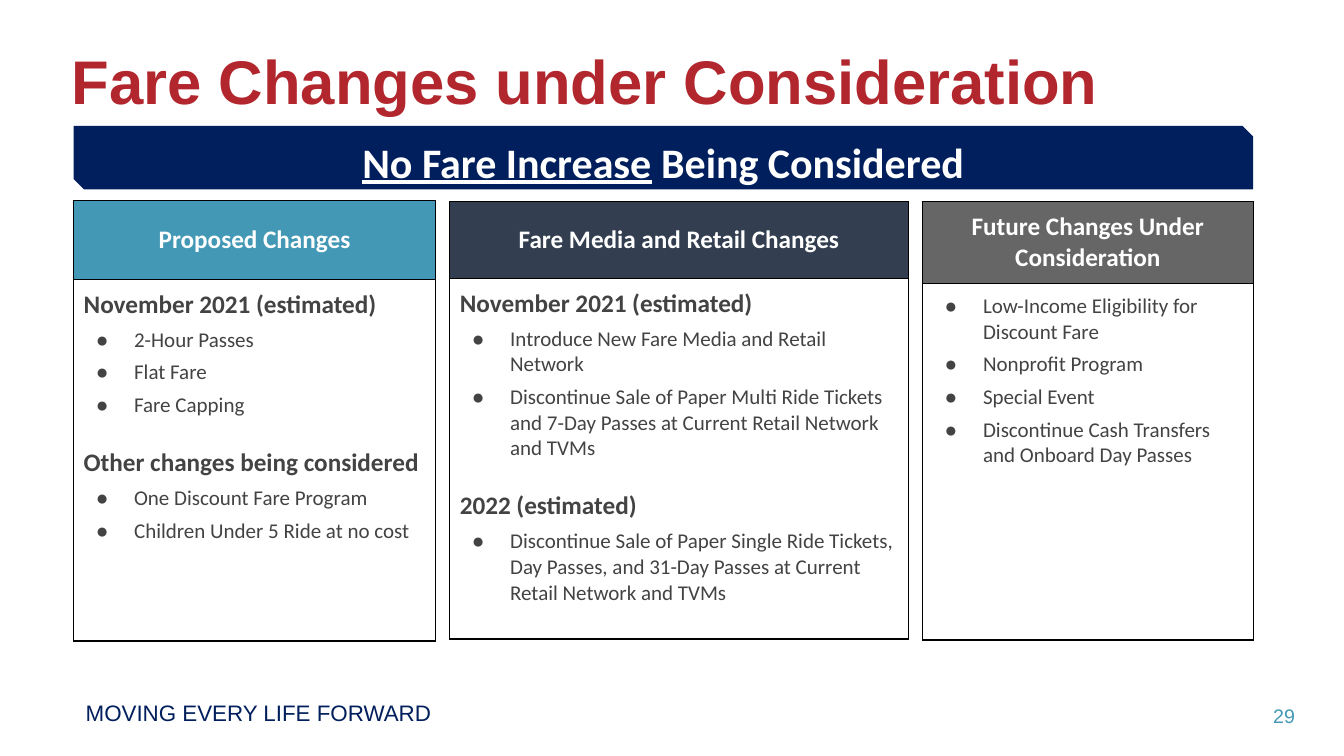
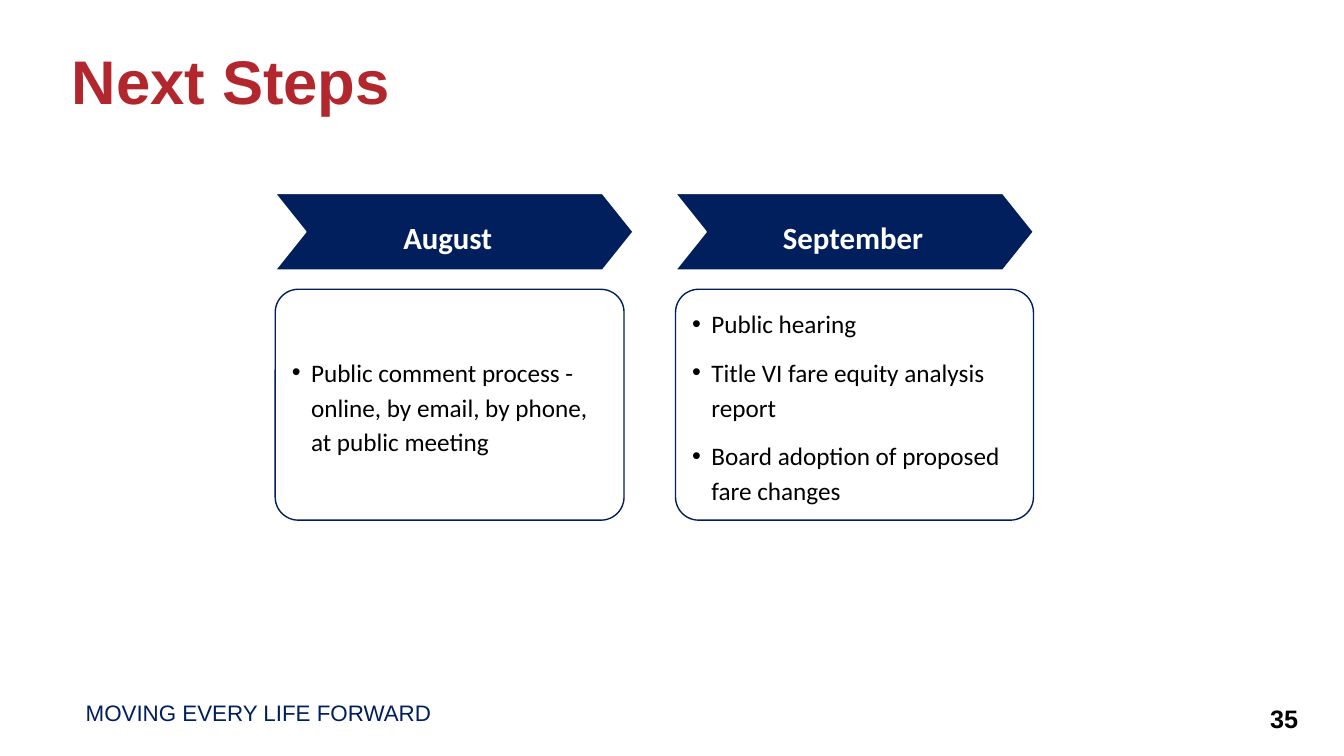
from lxml.etree import SubElement as Sub
from pptx import Presentation
from pptx.dml.color import RGBColor as RGB
from pptx.enum.shapes import MSO_SHAPE as Geo
from pptx.enum.text import MSO_ANCHOR as Anchor, MSO_AUTO_SIZE as Auto, PP_ALIGN as Align
from pptx.oxml.ns import qn
from pptx.util import Inches, Pt

HUES = {"navy": "011F5C", "red": "B2272D", "teal": "4298B5", "slate": "333F50",
        "gray": "666666", "text": "434343", "black": "000000", "white": "FFFFFF"}
INK = {name: RGB.from_string(code) for name, code in HUES.items()}

deck = Presentation()
deck.slide_width, deck.slide_height = Inches(13.33), Inches(7.5)


def put(frame, lines, size, hue, face="Calibri", bold=False, align=Align.LEFT,
        pad=(0.1, 0.1), gap=0, spread=None, dot=None, hang=(0, 0)):
    """Write one style of paragraphs after any text already in the frame."""
    if pad:
        frame.margin_left = frame.margin_right = Inches(pad[0])
        frame.margin_top = frame.margin_bottom = Inches(pad[1])
        frame.word_wrap = True
    for line in lines:
        fresh = not frame.text
        para = frame.paragraphs[0] if fresh else frame.add_paragraph()
        para.text = line
        if dot:
            props = para._p.get_or_add_pPr()
            props.set("marL", str(Inches(hang[0])))
            props.set("indent", str(Inches(hang[1])))
            tint = Sub(props, qn("a:buClr"))
            Sub(tint, qn("a:srgbClr"), val=HUES[hue])
            Sub(props, qn("a:buFont"), typeface="Arial")
            Sub(props, qn("a:buChar"), char=dot)
        para.alignment = align
        para.space_before = Pt(0 if fresh else gap)
        if spread:
            para.line_spacing = spread
        for run in para.runs:
            font = run.font
            font.name, font.size, font.bold = face, Pt(size), bold
            font.color.rgb = INK[hue]


def start(title, page, size, hue, bold):
    """Add a slide with its title, footer and page number."""
    slide = deck.slides.add_slide(deck.slide_layouts[5])
    head = slide.shapes.title
    head.left, head.top, head.width, head.height = map(Inches, (0.61, 0.46, 11.5, 0.76))
    head.text_frame.auto_size = Auto.NONE
    head.text_frame.vertical_anchor = Anchor.BOTTOM
    put(head.text_frame, [title], 44, "red", "Arial", True, pad=(0.1, 0.05), spread=0.9)
    foot = slide.shapes.add_textbox(*map(Inches, (0.85, 6.94, 4.76, 0.27)))
    put(foot.text_frame, ["MOVING EVERY LIFE FORWARD"], 16, "navy", "Arial", pad=(0, 0))
    mark = slide.shapes.add_textbox(*map(Inches, (12.59, 6.98, 0.29, 0.28)))
    put(mark.text_frame, [page], size, hue, "Arial", bold, Align.CENTER, pad=(0, 0))
    return slide


# Fare changes: a banner over three columns
LEFT, GAP = 0.73, 0.14
fares = start("Fare Changes under Consideration", "29", 14, "teal", False)
band = fares.shapes.add_shape(Geo.SNIP_2_DIAG_RECTANGLE,
                              *map(Inches, (LEFT, 1.25, 11.7, 0.63)))
band.shadow.inherit = False
band.fill.solid()
band.fill.fore_color.rgb = INK["navy"]
band.line.fill.background()
band.text_frame.vertical_anchor = Anchor.MIDDLE
put(band.text_frame, ["No Fare Increase"], 30, "white", bold=True,
    align=Align.CENTER, pad=(0.1, 0), spread=1.15)
first = band.text_frame.paragraphs[0]
first.runs[0].font.underline = True
rest = first.add_run()
rest.text = " Being Considered"
rest.font.name, rest.font.size, rest.font.bold = "Calibri", Pt(30), True
rest.font.color.rgb = INK["white"]

columns = [
    ("Proposed Changes", "teal", 1.99, 3.59, (0.78, 3.59), [
        ("November 2021 (estimated)", ["2-Hour Passes", "Flat Fare", "Fare Capping"]),
        ("Other changes being considered",
         ["One Discount Fare Program", "Children Under 5 Ride at no cost"])]),
    ("Fare Media and Retail Changes", "slate", 2, 4.55, (0.76, 3.58), [
        ("November 2021 (estimated)",
         ["Introduce New Fare Media and Retail Network",
          "Discontinue Sale of Paper Multi Ride Tickets and 7-Day Passes "
          "at Current Retail Network and TVMs"]),
        ("2022 (estimated)",
         ["Discontinue Sale of Paper Single Ride Tickets, Day Passes, "
          "and 31-Day Passes at Current Retail Network and TVMs"])]),
    ("Future Changes Under Consideration", "gray", 2, 3.28, (0.81, 3.54), [
        (None, ["Low-Income Eligibility for Discount Fare", "Nonprofit Program",
                "Special Event", "Discontinue Cash Transfers and Onboard Day Passes"])]),
]
x = LEFT
for name, hue, top, wide, rows, groups in columns:
    grid = fares.shapes.add_table(2, 1, *map(Inches, (x, top, wide, sum(rows)))).table
    grid.first_row = grid.horz_banding = False
    for row, high in zip(grid.rows, rows):
        row.height = Inches(high)
    head, body = grid.cell(0, 0), grid.cell(1, 0)
    for cell in (head, body):
        cell.margin_left = cell.margin_right = Inches(0.1)
        cell.margin_top = cell.margin_bottom = Inches(0.1)
        props = cell._tc.get_or_add_tcPr()
        for side in ("lnL", "lnR", "lnT", "lnB"):
            edge = Sub(props, qn("a:" + side), w=str(Pt(1)))
            Sub(Sub(edge, qn("a:solidFill")), qn("a:srgbClr"), val=HUES["black"])
    head.fill.solid()
    head.fill.fore_color.rgb = INK[hue]
    body.fill.background()
    head.vertical_anchor = Anchor.MIDDLE
    put(head.text_frame, [name], 18, "white", bold=True, align=Align.CENTER, pad=None)
    for label, items in groups:
        if label:
            put(body.text_frame, [label], 18, "text", bold=True, pad=None, gap=21)
        put(body.text_frame, items, 15, "text", pad=None, gap=5,
            dot="●", hang=(0.5, -0.38))
    x += wide + GAP

# Next steps: one chevron and one card a month
steps = start("Next Steps", "35", 18, "black", True)
months = [
    ("August", 2.73, 3.03, 3.46,
     ["Public comment process - online, by email, by phone, at public meeting"]),
    ("September", 6.7, 7.05, 3.55,
     ["Public hearing", "Title VI fare equity analysis report",
      "Board adoption of proposed fare changes"]),
]
for month, x, inner, wide, items in months:
    arrow = steps.shapes.add_shape(Geo.CHEVRON, *map(Inches, (x, 1.92, 3.55, 0.76)))
    card = steps.shapes.add_shape(Geo.ROUNDED_RECTANGLE,
                                  *map(Inches, (x, 2.87, wide, 2.29)))
    for shape, turn, fill, line in ((arrow, 0.4, "navy", "white"),
                                    (card, 0.1, "white", "navy")):
        shape.shadow.inherit = False
        shape.adjustments[0] = turn
        shape.fill.solid()
        shape.fill.fore_color.rgb = INK[fill]
        shape.line.color.rgb = INK[line]
        shape.line.width = Pt(1)
    card.text_frame.vertical_anchor = Anchor.MIDDLE
    put(card.text_frame, items, 18, "black", gap=10, spread=1.15,
        dot="•", hang=(0.19, -0.19))
    card.text_frame.paragraphs[-1].space_after = Pt(10)
    label = steps.shapes.add_textbox(*map(Inches, (inner, 2.02, 2.82, 0.57)))
    put(label.text_frame, [month], 22, "white", bold=True,
        align=Align.CENTER, spread=1.14)

deck.save("out.pptx")
